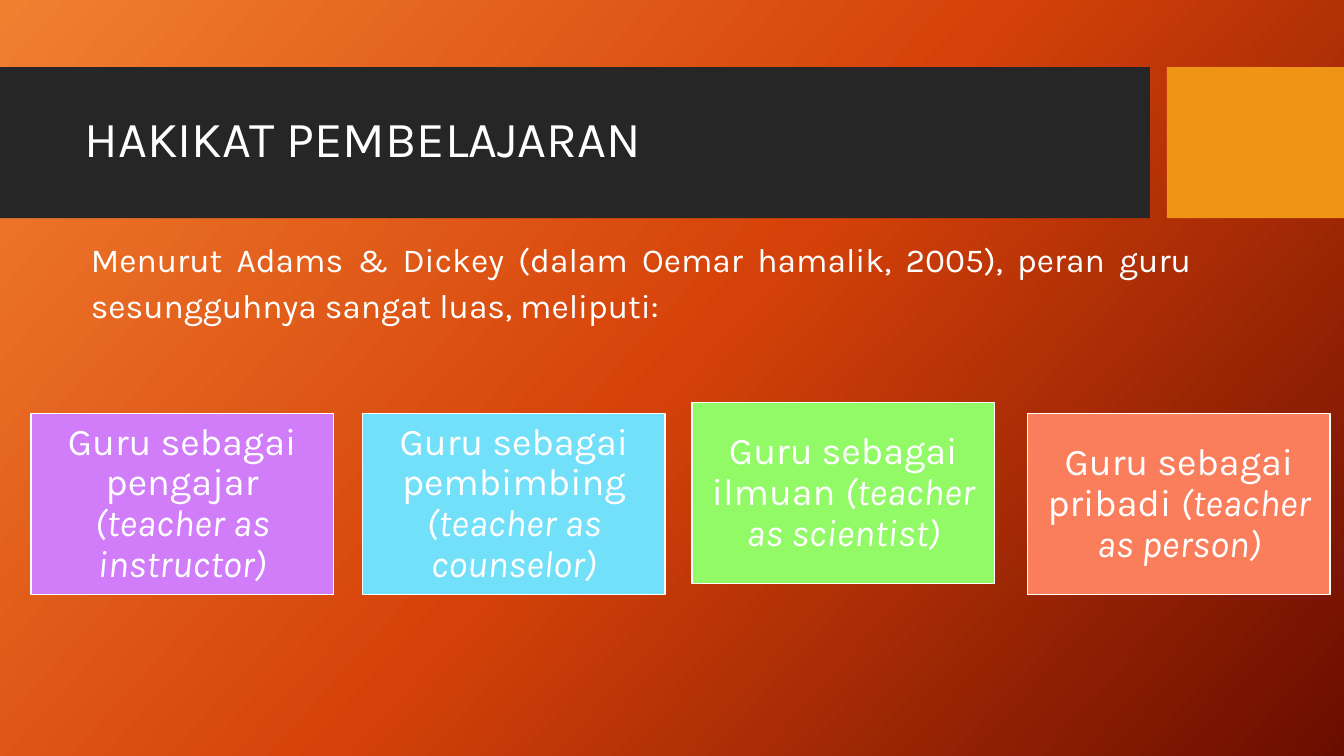
import copy
import pptx
import pptx.util
import pptx.dml.color
import pptx.enum.shapes
import pptx.enum.text
import pptx.oxml.ns

Cm = pptx.util.Cm
Align = pptx.enum.text.PP_ALIGN
Anchor = pptx.enum.text.MSO_ANCHOR
FONT = "Karla"
WHITE = "FFFFFF"
CARDS = [
    (0, 0.28, "D17DF9", "Guru sebagai pengajar ", "(teacher as instructor)"),
    (8.36, 0.28, "72E0F9", "Guru sebagai pembimbing ", "(teacher as counselor)"),
    (16.66, 0, "93FA67", "Guru sebagai ilmuan ", "(teacher as scientist)"),
    (25.12, 0.28, "FA7E5C", "Guru sebagai pribadi ", "(teacher as person)"),
]


def paint(code):
    return pptx.dml.color.RGBColor.from_string(code)


def style(item, **values):
    for name, value in values.items():
        setattr(item, name, value)


def write(frame, parts, size, align, space, **values):
    style(frame, word_wrap=True, auto_size=pptx.enum.text.MSO_AUTO_SIZE.NONE, **values)
    para = frame.paragraphs[0]
    style(para, alignment=align, line_spacing=space)
    for text, slant in parts:
        run = para.add_run()
        run.text = text
        style(run.font, name=FONT, size=pptx.util.Pt(size), italic=slant)
        run.font.color.rgb = paint(WHITE)
    return para


def block(slide, x, y, wide, high, color, edge=None):
    kind = pptx.enum.shapes.MSO_SHAPE.RECTANGLE
    shape = slide.shapes.add_shape(kind, Cm(x), Cm(y), Cm(wide), Cm(high))
    shape.shadow.inherit = False
    shape.fill.solid()
    shape.fill.fore_color.rgb = paint(color)
    if edge:
        shape.line.color.rgb = paint(edge)
        shape.line.width = pptx.util.Pt(1)
    else:
        shape.line.fill.background()
    return shape


def backdrop(slide):
    fill = slide.background.fill
    fill.gradient()
    fill.gradient_angle = 318
    stops = slide.element.find(".//" + pptx.oxml.ns.qn("a:gsLst"))
    stops.append(copy.deepcopy(stops[0]))
    colors = ["F18031", "D54209", "6A0D00"]
    for stop, color, place in zip(fill.gradient_stops, colors, [0, 0.5, 1]):
        stop.color.rgb = paint(color)
        stop.position = place


def header(slide, x, y, wide, high):
    bar, gap = 28.98, 0.43
    block(slide, x, y, bar, high, "262626")
    block(slide, x + bar + gap, y, wide - bar - gap, high, "F09415")
    title = slide.shapes.title
    style(title, left=Cm(x + 1.88), top=Cm(y + 0.38), width=Cm(26.7), height=Cm(3))
    write(title.text_frame, [("HAKIKAT PEMBELAJARAN", False)], 36, Align.LEFT, 0.9,
          vertical_anchor=Anchor.MIDDLE)
    tree = slide.shapes._spTree
    tree.remove(title.element)
    tree.append(title.element)


def intro(slide, x, y, wide, high):
    box = slide.shapes.add_textbox(Cm(x), Cm(y), Cm(wide), Cm(high))
    text = ("Menurut Adams & Dickey (dalam Oemar hamalik, 2005), "
            "peran guru sesungguhnya sangat luas, meliputi:")
    para = write(box.text_frame, [(text, False)], 24, Align.JUSTIFY, 1.15)
    props = para._p.get_or_add_pPr()
    props.set("marL", str(Cm(1.25)))
    props.set("indent", "0")


def cards(slide, x, y, wide, high):
    pad = Cm(0.28)
    for left, drop, color, role, name in CARDS:
        card = block(slide, x + left, y + drop, wide, high, color, WHITE)
        write(card.text_frame, [(role, False), (name, True)], 27, Align.CENTER, 0.9,
              vertical_anchor=Anchor.MIDDLE, margin_left=pad, margin_right=pad,
              margin_top=pad, margin_bottom=pad)


def main():
    deck = pptx.Presentation()
    style(deck, slide_width=Cm(33.87), slide_height=Cm(19.05))
    slide = deck.slides.add_slide(deck.slide_layouts[5])
    backdrop(slide)
    header(slide, 0, 1.69, 33.87, 3.81)
    intro(slide, 0.79, 5.74, 29.49, 2.51)
    cards(slide, 0.78, 10.14, 7.62, 4.57)
    deck.save("out.pptx")


if __name__ == "__main__":
    main()
